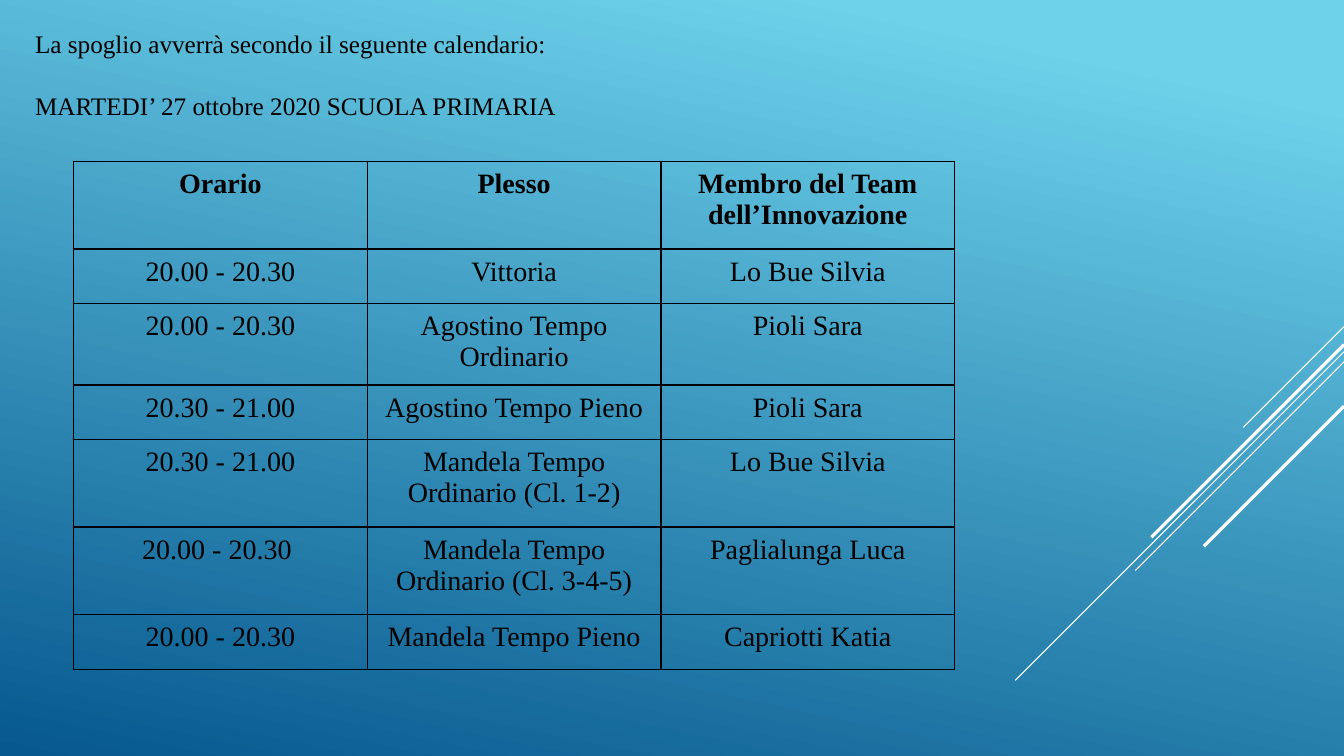
from lxml.etree import SubElement
from pptx import Presentation
from pptx.dml.color import RGBColor
from pptx.enum.shapes import MSO_CONNECTOR
from pptx.enum.text import PP_ALIGN
from pptx.oxml.ns import qn
from pptx.util import Inches, Pt

FONT = "Times New Roman"
WIDTH, HEIGHT = 13.33, 7.5
BLACK, WHITE = "000000", "FFFFFF"

INTRO = [
    "La spoglio avverrà secondo il seguente calendario:",
    "MARTEDI’ 27 ottobre 2020 SCUOLA PRIMARIA",
]
SCHEDULE = [
    # row height, time, school, team member
    (0.87, "Orario", "Plesso", "Membro del Team dell’Innovazione"),
    (0.54, "20.00 - 20.30", "Vittoria", "Lo Bue Silvia"),
    (0.81, "20.00 - 20.30", "Agostino Tempo Ordinario", "Pioli Sara"),
    (0.54, "20.30 - 21.00", "Agostino Tempo Pieno", "Pioli Sara"),
    (0.87, "20.30 - 21.00", "Mandela Tempo Ordinario (Cl. 1-2)", "Lo Bue Silvia"),
    (0.87, "20.00 - 20.30 ", "Mandela Tempo Ordinario (Cl. 3-4-5)", "Paglialunga Luca"),
    (0.54, "20.00 - 20.30", "Mandela Tempo Pieno", "Capriotti Katia"),
]
# Diagonals run down and left from the right edge: top, run, weight
DIAGONALS = [
    (3.24, 1.0, 0.75),
    (3.49, 3.26, 0.75),
    (3.59, 2.07, 0.75),
    (3.42, 1.91, 2.25),
    (4.03, 1.39, 2.25),
]


def color(value):
    return RGBColor.from_string(value)


def add_span(para, text, size, bold=False):
    span = para.add_run()
    span.text = text
    span.font.name = FONT
    span.font.size = Pt(size)
    span.font.bold = bold
    span.font.color.rgb = color(BLACK)


def paint_background(page):
    fill = page.background.fill
    fill.gradient()
    fill.gradient_angle = 258
    for stop, (position, value) in zip(fill.gradient_stops, [(0.1, "6ED2EB"), (1, "06588E")]):
        stop.position = position
        stop.color.rgb = color(value)


def add_diagonals(page, right):
    for top, run, weight in DIAGONALS:
        line = page.shapes.add_connector(
            MSO_CONNECTOR.STRAIGHT,
            Inches(right), Inches(top), Inches(right - run), Inches(top + run))
        line.line.color.rgb = color(WHITE)
        line.line.width = Pt(weight)
        SubElement(line._element.spPr, qn("a:effectLst"))


def add_intro(page, left, top, width, height):
    box = page.shapes.add_textbox(Inches(left), Inches(top), Inches(width), Inches(height))
    frame = box.text_frame
    frame.word_wrap = True
    for index, text in enumerate(INTRO):
        para = frame.add_paragraph() if index else frame.paragraphs[0]
        para.alignment = PP_ALIGN.JUSTIFY
        para.space_before = Pt(23 if index else 0)
        add_span(para, text, 18)


def add_borders(cell, value, weight):
    properties = cell._tc.get_or_add_tcPr()
    for side in ("lnL", "lnR", "lnT", "lnB"):
        border = SubElement(properties, qn("a:" + side), w=str(Pt(weight)))
        fill = SubElement(border, qn("a:solidFill"))
        SubElement(fill, qn("a:srgbClr"), val=value)


def add_schedule(page, left, top, width):
    columns = len(SCHEDULE[0]) - 1
    height = sum(row[0] for row in SCHEDULE)
    table = page.shapes.add_table(
        len(SCHEDULE), columns,
        Inches(left), Inches(top), Inches(width), Inches(height)).table
    table.first_row = table.horz_banding = False
    for column in table.columns:
        column.width = Inches(width / columns)
    for row_index, (row_height, *texts) in enumerate(SCHEDULE):
        table.rows[row_index].height = Inches(row_height)
        for column_index, text in enumerate(texts):
            cell = table.cell(row_index, column_index)
            cell.margin_left = cell.margin_right = Inches(0.07)
            cell.margin_top = cell.margin_bottom = Inches(0.07)
            add_borders(cell, BLACK, 1)
            cell.fill.background()
            para = cell.text_frame.paragraphs[0]
            para.alignment = PP_ALIGN.CENTER
            add_span(para, text, 20, bold=row_index == 0)


def main():
    deck = Presentation()
    deck.slide_width, deck.slide_height = Inches(WIDTH), Inches(HEIGHT)
    page = deck.slides.add_slide(deck.slide_layouts[6])
    paint_background(page)
    add_diagonals(page, WIDTH)
    add_intro(page, 0.25, 0.23, 6.67, 1.62)
    add_schedule(page, 0.73, 1.6, 8.74)
    deck.save("out.pptx")


if __name__ == "__main__":
    main()
